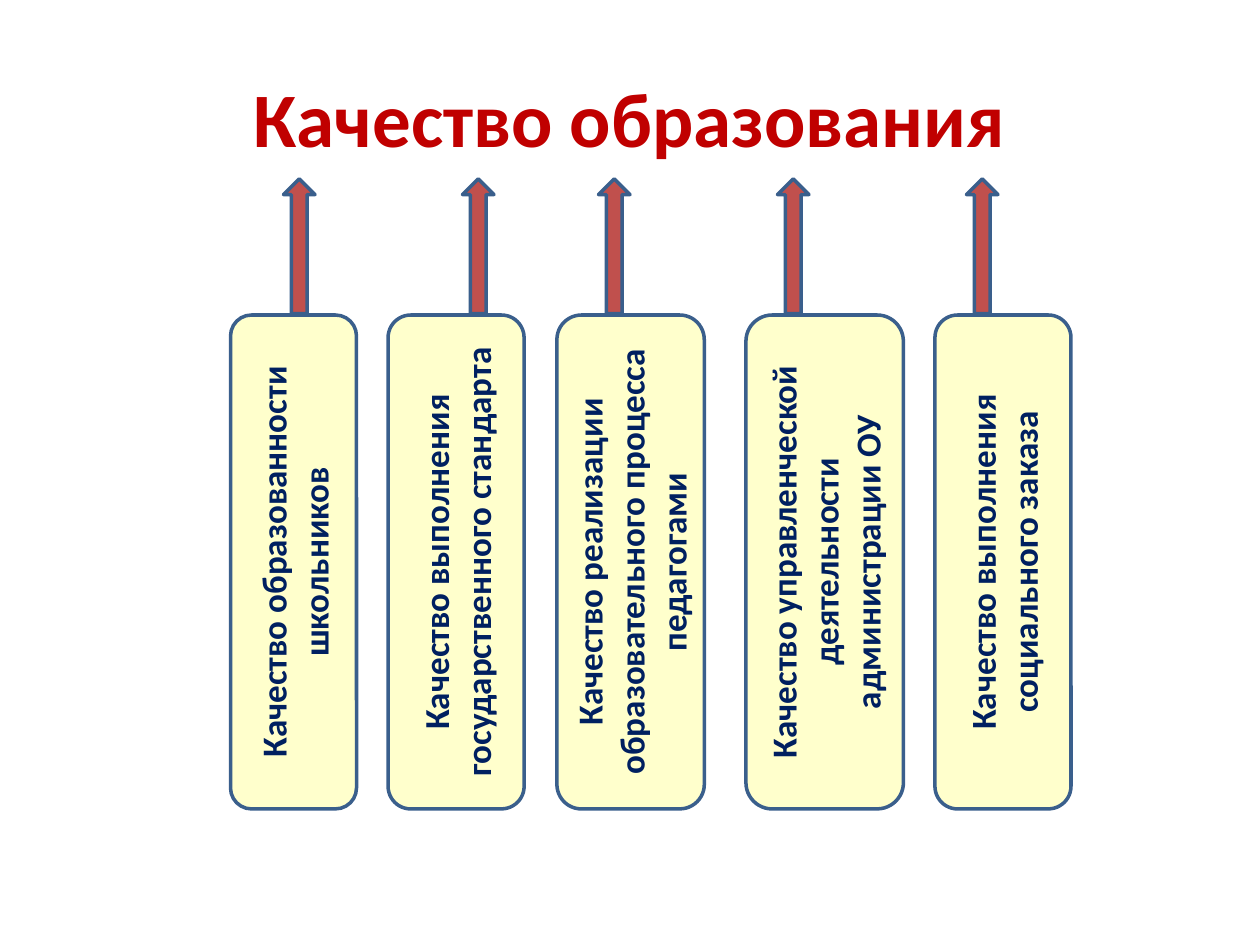
from typing import NamedTuple

from pptx import Presentation
from pptx.dml.color import RGBColor
from pptx.enum.shapes import MSO_SHAPE
from pptx.enum.text import MSO_ANCHOR, PP_ALIGN
from pptx.util import Inches, Pt

RED = RGBColor(0xC0, 0x00, 0x00)
BRICK = RGBColor(0xC0, 0x50, 0x4D)
CREAM = RGBColor(0xFF, 0xFF, 0xCC)
BLUE = RGBColor(0x3A, 0x5F, 0x8C)
NAVY = RGBColor(0x00, 0x20, 0x60)

ARROW_TOP, ARROW_WIDTH, ARROW_HEIGHT = 1.42, 0.25, 1.07
PILLAR_TOP, PILLAR_HEIGHT = 2.5, 3.92


class Pillar(NamedTuple):
    left: float
    width: float
    arrow: float
    text: str


PILLARS = [
    Pillar(1.83, 1, 2.25, "Качество образованности школьников"),
    Pillar(3.08, 1.08, 3.67, "Качество выполнения государственного стандарта"),
    Pillar(4.42, 1.17, 4.75, "Качество реализации образовательного процесса педагогами"),
    Pillar(5.92, 1.25, 6.17, "Качество управленческой деятельности администрации ОУ"),
    Pillar(7.42, 1.08, 7.67, "Качество выполнения социального заказа"),
]


def write(shape, text: str, size: float, color: RGBColor) -> None:
    frame = shape.text_frame
    frame.text = text
    frame.word_wrap = True
    frame.vertical_anchor = MSO_ANCHOR.MIDDLE
    line = frame.paragraphs[0]
    line.alignment = PP_ALIGN.CENTER
    font = line.runs[0].font
    font.name = "Calibri"
    font.size = Pt(size)
    font.bold = True
    font.color.rgb = color


def add_block(slide, kind: MSO_SHAPE, left: float, top: float,
              width: float, height: float, fill: RGBColor):
    shape = slide.shapes.add_shape(
        kind, Inches(left), Inches(top), Inches(width), Inches(height))
    shape.shadow.inherit = False
    shape.fill.solid()
    shape.fill.fore_color.rgb = fill
    shape.line.color.rgb = BLUE
    shape.line.width = Pt(2)
    return shape


def add_pillar(slide, pillar: Pillar) -> None:
    add_block(slide, MSO_SHAPE.UP_ARROW, pillar.arrow, ARROW_TOP,
              ARROW_WIDTH, ARROW_HEIGHT, BRICK)
    box = add_block(slide, MSO_SHAPE.ROUNDED_RECTANGLE, pillar.left, PILLAR_TOP,
                    pillar.width, PILLAR_HEIGHT, CREAM)
    write(box, pillar.text, 20, NAVY)
    box.element.txBody.bodyPr.set("vert", "vert270")


def main() -> None:
    deck = Presentation()
    deck.slide_width = Inches(10)
    deck.slide_height = Inches(7.5)
    slide = deck.slides.add_slide(deck.slide_layouts[6])
    title = slide.shapes.add_textbox(
        Inches(0.5), Inches(0.3), Inches(9), Inches(1.25))
    write(title, "Качество образования", 44, RED)
    for pillar in PILLARS:
        add_pillar(slide, pillar)
    deck.save("out.pptx")


if __name__ == "__main__":
    main()
